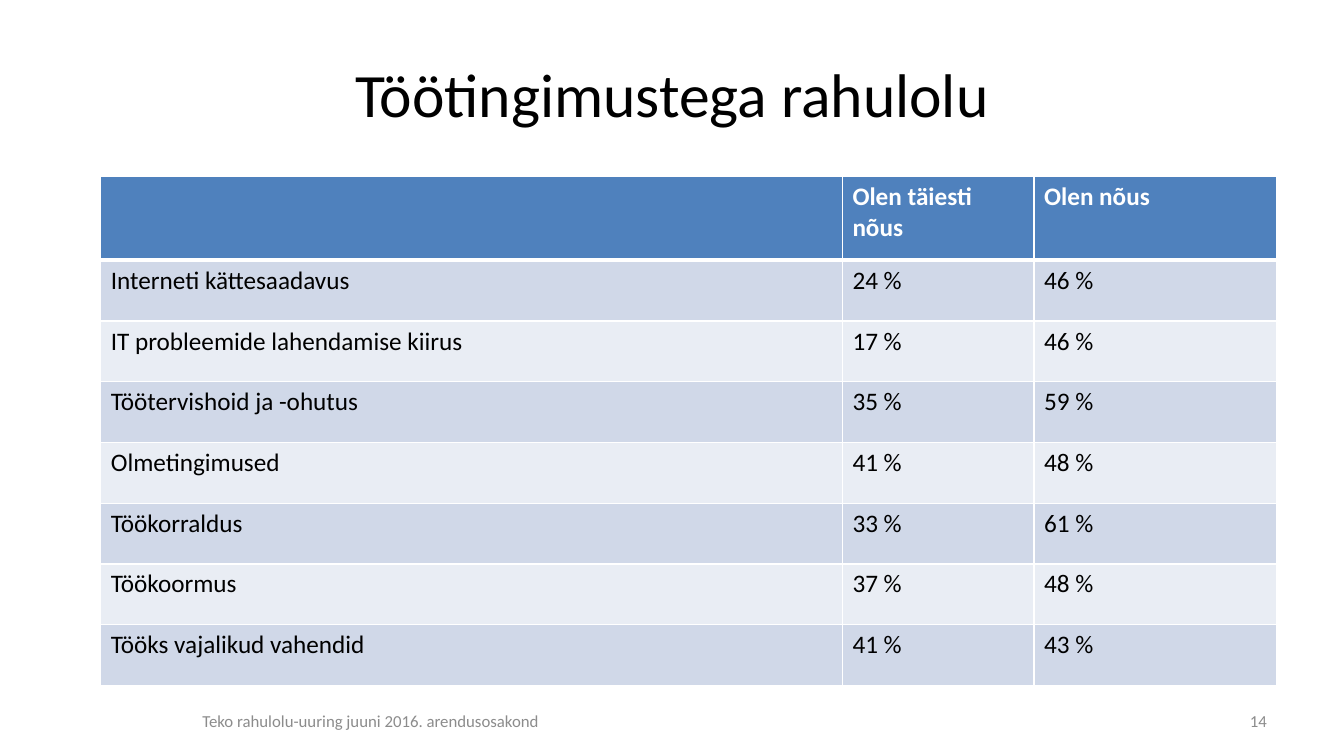
"""Build a slide with a table of satisfaction with working conditions."""
from lxml import etree
from pptx import Presentation
from pptx.dml.color import RGBColor
from pptx.enum.text import MSO_ANCHOR, PP_ALIGN
from pptx.oxml.ns import qn
from pptx.util import Cm, Pt

CENTER, RIGHT = PP_ALIGN.CENTER, PP_ALIGN.RIGHT
MIDDLE = MSO_ANCHOR.MIDDLE
FONT = "Calibri"
BLACK = RGBColor(0x00, 0x00, 0x00)
WHITE = RGBColor(0xFF, 0xFF, 0xFF)
GRAY = RGBColor(0x8C, 0x8C, 0x8C)
BLUE = RGBColor(0x4F, 0x81, 0xBD)
BANDS = RGBColor(0xD0, 0xD8, 0xE8), RGBColor(0xE9, 0xED, 0xF4)

WIDTHS = 18.69, 4.83, 6.12
HEAD_H, ROW_H = 2.11, 1.53
ROWS = [
    ("", "Olen täiesti nõus", "Olen nõus"),
    ("Interneti kättesaadavus", "24 %", "46 %"),
    ("IT probleemide lahendamise kiirus", "17 %", "46 %"),
    ("Töötervishoid ja -ohutus", "35 %", "59 %"),
    ("Olmetingimused", "41 %", "48 %"),
    ("Töökorraldus", "33 %", "61 %"),
    ("Töökoormus", "37 %", "48 %"),
    ("Tööks vajalikud vahendid", "41 %", "43 %"),
]


def style(para, size, color, bold=False):
    """Format every run of a paragraph."""
    for run in para.runs:
        font = run.font
        font.name, font.size, font.bold = FONT, Pt(size), bold
        font.color.rgb = color


def add_text(slide, text, box, size, color, align):
    """Add one line of text in a box given in centimetres."""
    frame = slide.shapes.add_textbox(*map(Cm, box)).text_frame
    frame.word_wrap = True
    frame.vertical_anchor = MIDDLE
    frame.text = text
    para = frame.paragraphs[0]
    para.alignment = align
    style(para, size, color)


def add_edge(cell, side, width):
    """Draw a white border on one side of a cell."""
    props = cell._tc.get_or_add_tcPr()
    line = etree.SubElement(props, qn(f"a:ln{side}"), w=str(Pt(width)))
    fill = etree.SubElement(line, qn("a:solidFill"))
    etree.SubElement(fill, qn("a:srgbClr"), val=str(WHITE))


def fill_cell(cell, text, row):
    """Set the borders, fill and text of a cell by its row."""
    head = row == 0
    for side in "LRTB":
        thick = (head and side == "B") or (row == 1 and side == "T")
        add_edge(cell, side, 3 if thick else 1)
    cell.fill.solid()
    cell.fill.fore_color.rgb = BLUE if head else BANDS[(row - 1) % 2]
    cell.text_frame.text = text
    style(cell.text_frame.paragraphs[0], 18, WHITE if head else BLACK, head)


def add_grid(slide, left, top):
    """Add the table of answers."""
    height = HEAD_H + ROW_H * (len(ROWS) - 1)
    box = map(Cm, (left, top, sum(WIDTHS), height))
    table = slide.shapes.add_table(len(ROWS), len(WIDTHS), *box).table
    for col, width in zip(table.columns, WIDTHS):
        col.width = Cm(width)
    for row, texts in enumerate(ROWS):
        table.rows[row].height = Cm(ROW_H if row else HEAD_H)
        for col, text in enumerate(texts):
            fill_cell(table.cell(row, col), text, row)


def main():
    """Build and save the slide."""
    deck = Presentation()
    deck.slide_width, deck.slide_height = Cm(33.87), Cm(19.05)
    slide = deck.slides.add_slide(deck.slide_layouts[6])
    add_text(slide, "Töötingimustega rahulolu",
             (1.7, 0.76, 30.48, 3.18), 44, BLACK, CENTER)
    add_grid(slide, 2.54, 4.45)
    add_text(slide, "Teko rahulolu-uuring juuni 2016. arendusosakond",
             (1.7, 17.65, 15.29, 1.02), 12, GRAY, CENTER)
    add_text(slide, "14", (24.28, 17.65, 7.9, 1.02), 12, GRAY, RIGHT)
    deck.save("out.pptx")


if __name__ == "__main__":
    main()
